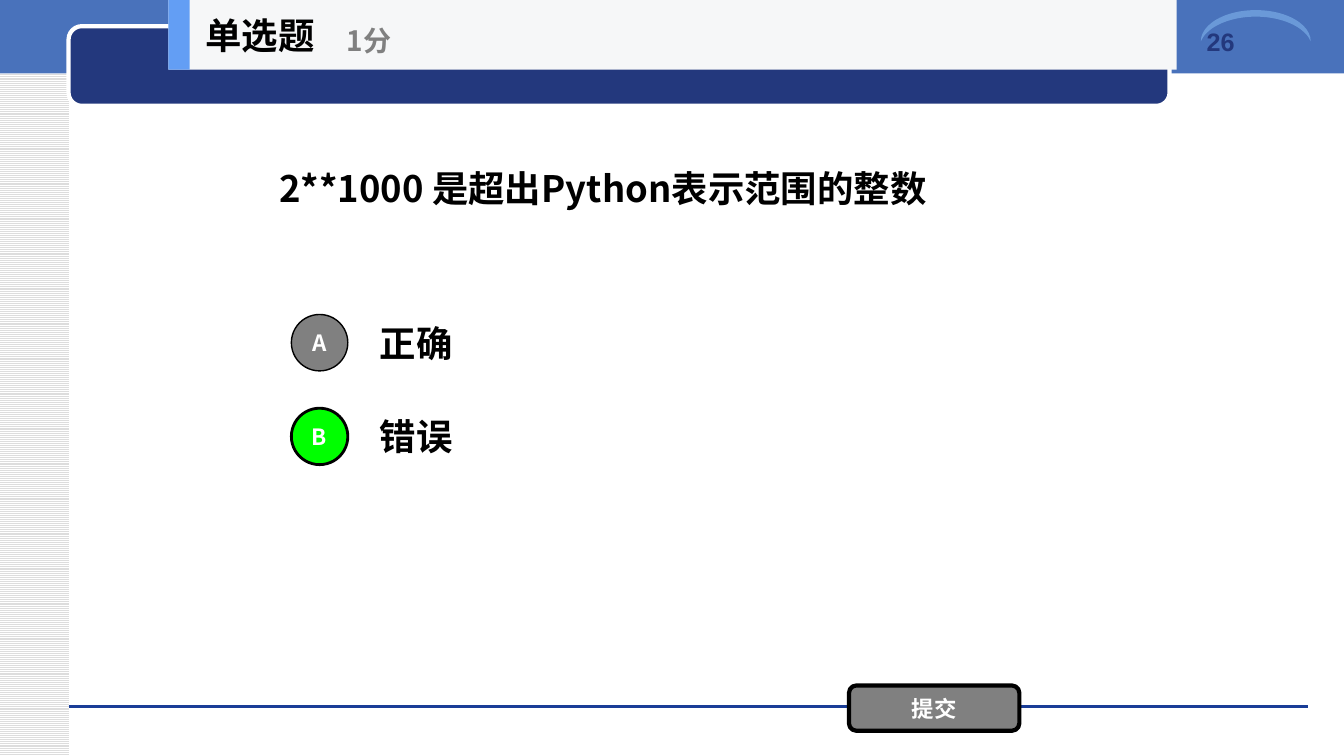
"""Build a single-choice quiz slide with two answers and a submit button."""
from pptx import Presentation
from pptx.dml.color import RGBColor
from pptx.enum.dml import MSO_PATTERN
from pptx.enum.shapes import MSO_CONNECTOR, MSO_SHAPE
from pptx.enum.text import MSO_ANCHOR, MSO_AUTO_SIZE, PP_ALIGN
from pptx.oxml.ns import qn
from pptx.util import Inches, Pt
from lxml.etree import SubElement

BLACK = RGBColor(0x00, 0x00, 0x00)
WHITE = RGBColor(0xFF, 0xFF, 0xFF)
GRAY = RGBColor(0x80, 0x80, 0x80)
STRIPE = RGBColor(0xDD, 0xDD, 0xDD)
GREEN = RGBColor(0x00, 0xFF, 0x00)
BAND = RGBColor(0x49, 0x72, 0xBB)
NAVY = RGBColor(0x23, 0x38, 0x7D)
RULE = RGBColor(0x1A, 0x3D, 0x97)
MOON = RGBColor(0x6A, 0x99, 0xD8)
PANEL = RGBColor(0xF6, 0xF7, 0xF8)
ACCENT = RGBColor(0x63, 0x9E, 0xF4)
CJK = "Noto Sans CJK SC"


def add_shape(kind, x, y, w, h, fill, line=None, width=0):
    sp = s.shapes.add_shape(kind, Inches(x), Inches(y), Inches(w), Inches(h))
    sp.shadow.inherit = False
    sp.fill.solid()
    sp.fill.fore_color.rgb = fill
    if line is None:
        sp.line.fill.background()
    else:
        sp.line.color.rgb = line
        sp.line.width = Pt(width)
    return sp


def write(sp, text, size, color, align=PP_ALIGN.LEFT, anchor=MSO_ANCHOR.MIDDLE, font=CJK):
    tf = sp.text_frame
    tf.word_wrap = True
    tf.auto_size = MSO_AUTO_SIZE.NONE
    tf.vertical_anchor = anchor
    p = tf.paragraphs[0]
    p.alignment = align
    r = p.add_run()
    r.text = text
    r.font.size = Pt(size)
    r.font.bold = True
    r.font.name = font
    r.font.color.rgb = color
    SubElement(r.font._element, qn("a:ea")).set("typeface", font)


prs = Presentation()
prs.slide_width = Inches(13.33)
prs.slide_height = Inches(7.5)
s = prs.slides.add_slide(prs.slide_layouts[5])

stripes = add_shape(MSO_SHAPE.RECTANGLE, 0, 0, 0.68, 7.5, WHITE)
stripes.fill.patterned()
stripes.fill.pattern = MSO_PATTERN.LIGHT_HORIZONTAL
stripes.fill.fore_color.rgb = STRIPE
stripes.fill.back_color.rgb = WHITE

add_shape(MSO_SHAPE.RECTANGLE, 0, 0, 13.33, 0.73, BAND)

rule = s.shapes.add_connector(
    MSO_CONNECTOR.STRAIGHT, Inches(0.68), Inches(7.01), Inches(12.97), Inches(7.01))
rule.line.color.rgb = RULE
rule.line.width = Pt(0)
SubElement(rule._element.spPr, qn("a:effectLst"))

add_shape(MSO_SHAPE.ROUNDED_RECTANGLE, 0.68, 0.26, 10.92, 0.79, NAVY, WHITE, 3)
moon = add_shape(MSO_SHAPE.MOON, 12.3, -0.29, 0.31, 1.09, MOON)
moon.adjustments[0] = 0.21
moon.rotation = 90

add_shape(MSO_SHAPE.RECTANGLE, 1.67, 0, 10, 0.69, PANEL)
add_shape(MSO_SHAPE.RECTANGLE, 1.67, 0, 0.21, 0.69, ACCENT)

question = s.shapes.title
question.left, question.top = Inches(2.67), Inches(0.69)
question.width, question.height = Inches(8), Inches(2.34)
write(question, "2**1000 是超出Python表示范围的整数", 26, BLACK)

number = s.shapes.add_textbox(Inches(11.87), Inches(0.21), Inches(1.21), Inches(0.71))
write(number, "26", 18, NAVY, anchor=MSO_ANCHOR.TOP, font="Arial")

labels = [
    ("单选题", 1.94, 0, 2.08, 0.69, 26, BLACK),
    ("1分", 3.34, 0.12, 2.5, 0.56, 20, GRAY),
]
for text, x, y, w, h, size, color in labels:
    tb = s.shapes.add_textbox(Inches(x), Inches(y), Inches(w), Inches(h))
    write(tb, text, size, color)

options = [("A", "正确", GRAY, 1), ("B", "错误", GREEN, 2)]
for i, (letter, answer, fill, width) in enumerate(options):
    y = 3.05 + i * 0.93
    tb = s.shapes.add_textbox(Inches(3.67), Inches(y), Inches(7), Inches(0.7))
    write(tb, answer, 26, BLACK)
    badge = add_shape(MSO_SHAPE.OVAL, 2.89, y + 0.07, 0.56, 0.56, fill, BLACK, width)
    tf = badge.text_frame
    tf.margin_left = tf.margin_right = tf.margin_top = tf.margin_bottom = 0
    write(badge, letter, 16, WHITE, PP_ALIGN.CENTER)

button = add_shape(MSO_SHAPE.ROUNDED_RECTANGLE, 8.42, 6.8, 1.69, 0.45, GRAY, BLACK, 3)
write(button, "提交", 16, WHITE, PP_ALIGN.CENTER)

prs.save("out.pptx")
